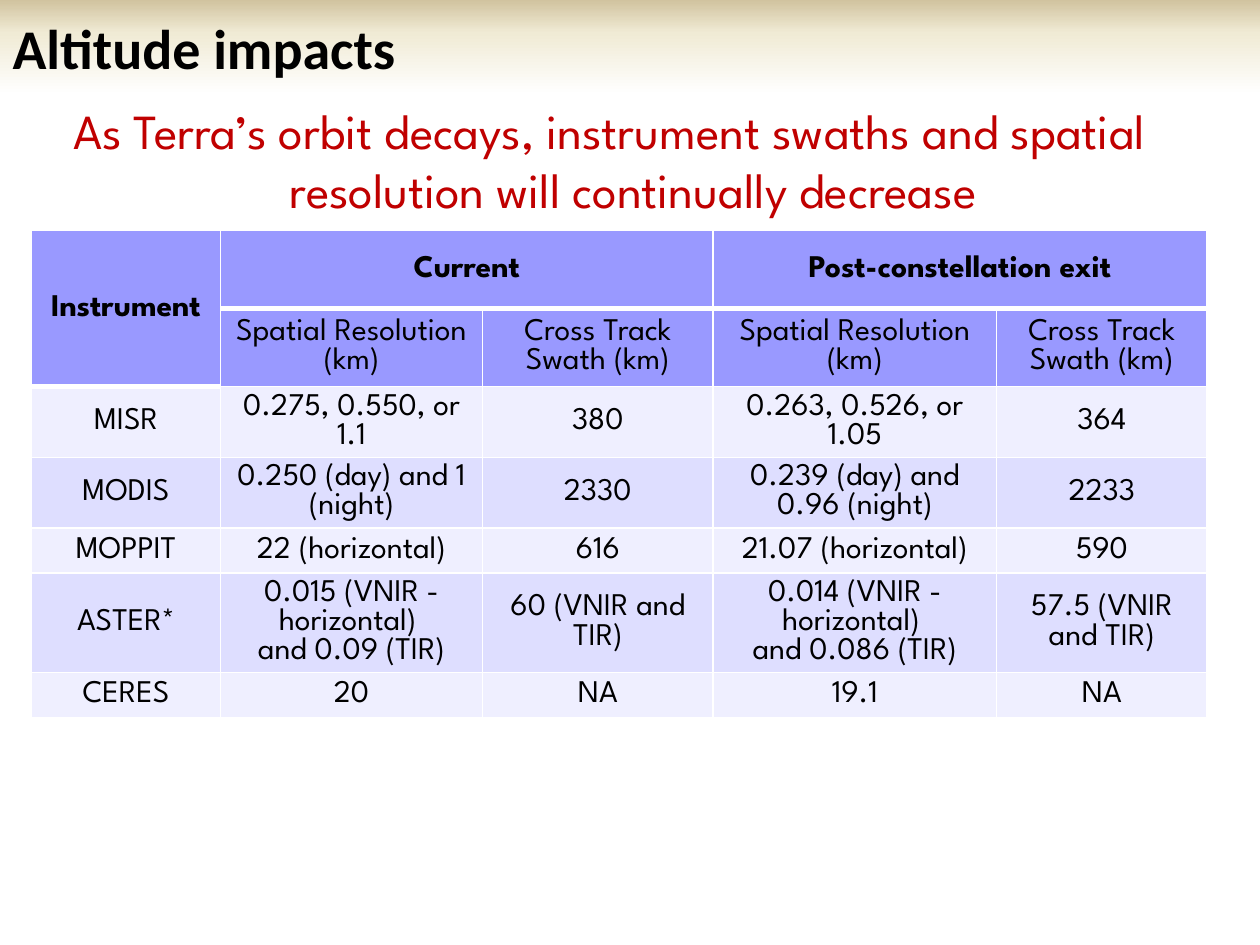
from lxml import etree
from pptx import Presentation
from pptx.dml.color import RGBColor
from pptx.enum.text import MSO_ANCHOR, MSO_AUTO_SIZE, PP_ALIGN
from pptx.oxml import parse_xml
from pptx.oxml.ns import nsdecls, qn
from pptx.util import Inches, Pt

LEFT, CENTER = PP_ALIGN.LEFT, PP_ALIGN.CENTER
MIDDLE, TOP = MSO_ANCHOR.MIDDLE, MSO_ANCHOR.TOP
NO_FIT = MSO_AUTO_SIZE.NONE

BLACK = RGBColor(0x00, 0x00, 0x00)
WHITE = RGBColor(0xFF, 0xFF, 0xFF)
RED = RGBColor(0xC0, 0x00, 0x00)
CREAM = RGBColor(0xF0, 0xEB, 0xD5)
TAN = RGBColor(0xD1, 0xC3, 0x9F)
HEAD = RGBColor(0x99, 0x99, 0xFF)
PALE = RGBColor(0xEF, 0xEF, 0xFF)
LILAC = RGBColor(0xDE, 0xDE, 0xFF)

SANS = "Calibri"
BODY = "League Spartan"

COLS = [1.5, 2.08, 1.83, 2.25, 1.67]
ROWS = [0.62, 0.62, 0.56, 0.56, 0.36, 0.79, 0.36]
MEASURES = ["Spatial Resolution (km)", "Cross Track Swath (km)"]
DATA = [
    ["Instrument", "Current", "", "Post-constellation exit", ""],
    [""] + MEASURES * 2,
    ["MISR", "0.275, 0.550, or 1.1", "380", "0.263, 0.526, or 1.05", "364"],
    ["MODIS", "0.250 (day) and 1 (night)", "2330",
     "0.239 (day) and 0.96 (night)", "2233"],
    ["MOPPIT", "22 (horizontal)", "616", "21.07 (horizontal)", "590"],
    ["ASTER*", "0.015 (VNIR - horizontal) \nand 0.09 (TIR)",
     "60 (VNIR and TIR)", "0.014 (VNIR - horizontal) \nand 0.086 (TIR)",
     "57.5 (VNIR and TIR)"],
    ["CERES", "20", "NA", "19.1", "NA"],
]


def write(frame, text, size=18, font=BODY, color=BLACK, bold=False,
          align=CENTER, space=None):
    """Fill a text frame, one paragraph for each line of text."""
    frame.text = text
    frame.word_wrap = True
    for para in frame.paragraphs:
        para.alignment = align
        para.line_spacing = space
        for run in para.runs:
            run.font.size = Pt(size)
            run.font.name = font
            run.font.bold = bold
            run.font.color.rgb = color


def place(shape, box):
    shape.left, shape.top, shape.width, shape.height = map(Inches, box)


def add_title(slide, box):
    title = slide.shapes.title
    place(title, box)
    write(title.text_frame, "Altitude impacts", size=32, font=SANS,
          bold=True, align=LEFT)
    title.text_frame.auto_size = NO_FIT
    title.text_frame.vertical_anchor = MIDDLE
    # Band that fades from tan at the top to white
    stops = "".join(
        f'<a:gs pos="{pos * 1000}"><a:srgbClr val="{color}"/></a:gs>'
        for pos, color in [(0, WHITE), (65, CREAM), (100, TAN)])
    title.element.spPr.append(parse_xml(
        f'<a:gradFill {nsdecls("a")} rotWithShape="1"><a:gsLst>{stops}'
        '</a:gsLst><a:lin ang="16200000" scaled="0"/></a:gradFill>'))


def add_claim(slide, box):
    frame = slide.shapes.add_textbox(*map(Inches, box)).text_frame
    write(frame, "As Terra’s orbit decays, instrument swaths and spatial "
          "resolution will continually decrease", size=28, color=RED)
    frame.vertical_anchor = TOP
    # Hanging indent
    props = frame.paragraphs[0]._p.get_or_add_pPr()
    props.set("marL", str(Inches(0.38)))
    props.set("indent", str(Inches(-0.38)))


def set_edges(cell, base):
    """Draw white cell borders; base is the width of the bottom one."""
    props = cell._tc.get_or_add_tcPr()
    for i, (side, width) in enumerate(
            [("lnL", 1), ("lnR", 1), ("lnT", 1), ("lnB", base)]):
        line = etree.Element(qn("a:" + side), w=str(Pt(width)))
        fill = etree.SubElement(line, qn("a:solidFill"))
        etree.SubElement(fill, qn("a:srgbClr"), val=str(WHITE))
        props.insert(i, line)


def add_grid(slide, box):
    table = slide.shapes.add_table(
        len(ROWS), len(COLS), *map(Inches, box)).table
    for col, width in zip(table.columns, COLS):
        col.width = Inches(width)
    for row, height in zip(table.rows, ROWS):
        row.height = Inches(height)
    # Header spans
    for start, end in [((0, 0), (1, 0)), ((0, 1), (0, 2)), ((0, 3), (0, 4))]:
        table.cell(*start).merge(table.cell(*end))
    # Cells
    for r, texts in enumerate(DATA):
        for c, text in enumerate(texts):
            cell = table.cell(r, c)
            if text:
                write(cell.text_frame, text, bold=r == 0, space=Pt(16.6))
            cell.vertical_anchor = MIDDLE
            cell.margin_left = cell.margin_right = Inches(0.09)
            cell.margin_top = cell.margin_bottom = Inches(0.04)
            cell.fill.solid()
            cell.fill.fore_color.rgb = (
                HEAD if r < 2 else LILAC if r % 2 else PALE)
            set_edges(cell, 3 if r == 0 or (r, c) == (1, 0) else 1)


def main():
    deck = Presentation()
    deck.slide_width, deck.slide_height = Inches(10), Inches(7.5)
    slide = deck.slides.add_slide(deck.slide_layouts[5])
    add_claim(slide, (0.25, 0.75, 9.17, 1.08))
    add_title(slide, (0, 0, 10, 0.75))
    add_grid(slide, (0.25, 1.83, sum(COLS), sum(ROWS)))
    deck.save("out.pptx")


if __name__ == "__main__":
    main()
